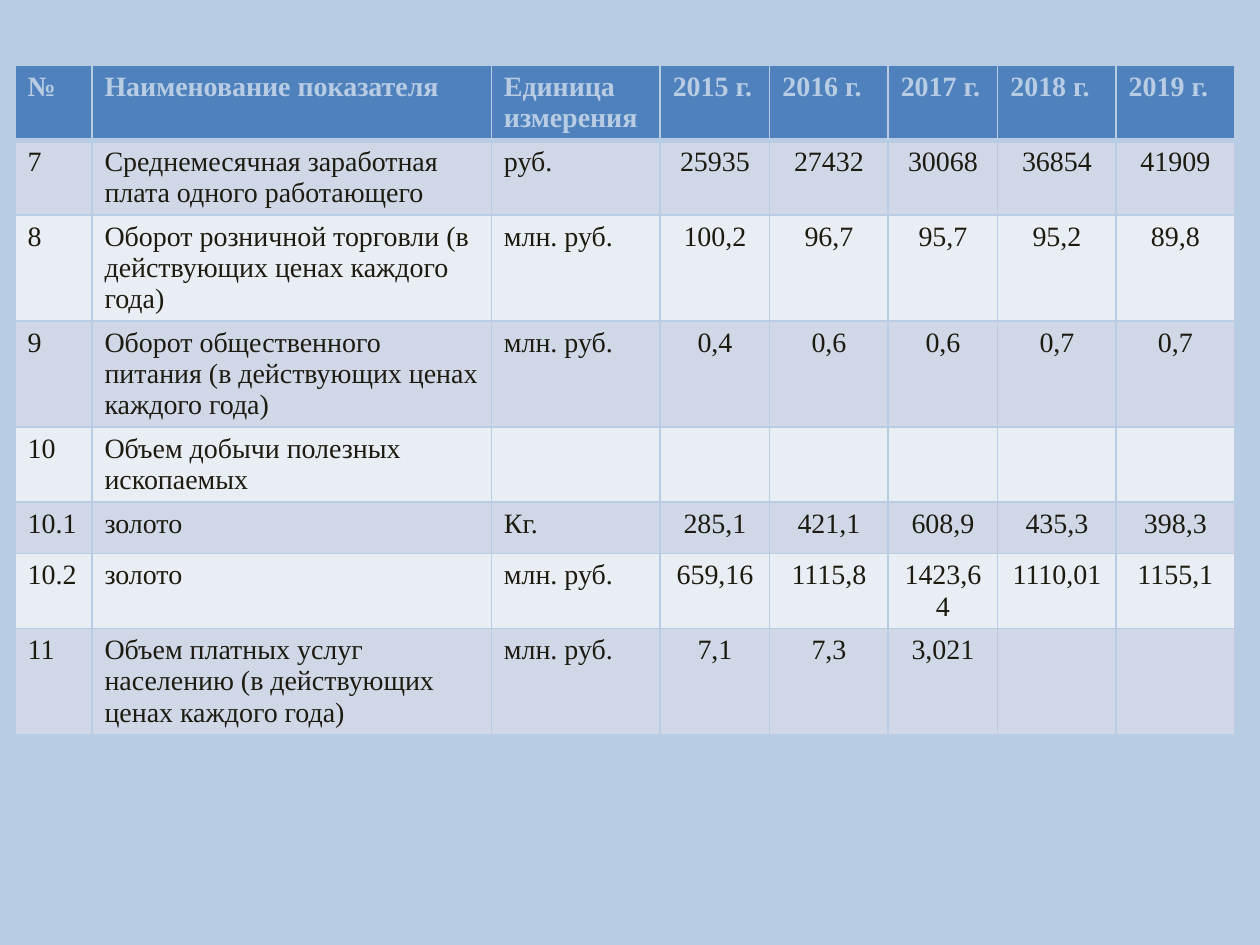
import pptx
import pptx.dml.color
import pptx.enum.text
import pptx.oxml
import pptx.oxml.ns
import pptx.util

Inches = pptx.util.Inches
RGBColor = pptx.dml.color.RGBColor

PALE_BLUE = RGBColor(0xB8, 0xCC, 0xE4)
HEADER_BLUE = RGBColor(0x4F, 0x81, 0xBD)
BAND_DARK = RGBColor(0xD0, 0xD8, 0xE8)
BAND_LIGHT = RGBColor(0xE9, 0xED, 0xF4)
TEXT_DARK = RGBColor(0x1D, 0x1B, 0x10)

FONT = "Times New Roman"
FONT_SIZE = 16
COLUMN_WIDTHS = [0.61, 3.17, 1.34, 0.87, 0.94, 0.87, 0.94, 0.94]
ROW_HEIGHT = 0.41
FIRST_YEAR_COLUMN = 3

HEADER = ["№", "Наименование показателя", "Единица измерения"] + [
    f"{year} г." for year in range(2015, 2020)
]
INDICATORS = [
    ["7", "Среднемесячная заработная плата одного работающего", "руб.",
     "25935", "27432", "30068", "36854", "41909"],
    ["8", "Оборот розничной торговли (в действующих ценах каждого года)", "млн. руб.",
     "100,2", "96,7", "95,7", "95,2", "89,8"],
    ["9", "Оборот общественного питания (в действующих ценах каждого года)", "млн. руб.",
     "0,4", "0,6", "0,6", "0,7", "0,7"],
    ["10", "Объем добычи полезных ископаемых", "", "", "", "", "", ""],
    ["10.1", "золото", "Кг.", "285,1", "421,1", "608,9", "435,3", "398,3"],
    ["10.2", "золото", "млн. руб.", "659,16", "1115,8", "1423,64", "1110,01", "1155,1"],
    ["11", "Объем платных услуг населению (в действующих ценах каждого года)", "млн. руб.",
     "7,1", "7,3", "3,021", "", ""],
]


def set_borders(cell, top=1, bottom=1):
    """Draw the four cell borders; must run before the cell is filled."""
    properties = cell._tc.get_or_add_tcPr()
    for side, width in (("L", 1), ("R", 1), ("T", top), ("B", bottom)):
        properties.append(pptx.oxml.parse_xml(
            f'<a:ln{side} {pptx.oxml.ns.nsdecls("a")} w="{pptx.util.Pt(width)}">'
            f'<a:solidFill><a:srgbClr val="{PALE_BLUE}"/></a:solidFill>'
            f'</a:ln{side}>'
        ))


def style_cell(cell, text, fill, color, bold=False, centred=False):
    cell.fill.solid()
    cell.fill.fore_color.rgb = fill
    cell.text = text
    para = cell.text_frame.paragraphs[0]
    if centred:
        para.alignment = pptx.enum.text.PP_ALIGN.CENTER
    para.font.name = FONT
    para.font.size = pptx.util.Pt(FONT_SIZE)
    para.font.bold = bold
    para.font.color.rgb = color


def add_indicator_table(page):
    rows = [HEADER] + INDICATORS
    table = page.shapes.add_table(
        len(rows), len(COLUMN_WIDTHS), Inches(0.12), Inches(0.52),
        Inches(sum(COLUMN_WIDTHS)), Inches(ROW_HEIGHT * len(rows)),
    ).table
    for column, width in zip(table.columns, COLUMN_WIDTHS):
        column.width = Inches(width)

    for row_index, row in enumerate(rows):
        table.rows[row_index].height = Inches(ROW_HEIGHT)
        for column_index, text in enumerate(row):
            cell = table.cell(row_index, column_index)
            # Thick rule between the header and the first indicator
            set_borders(cell, top=3 if row_index == 1 else 1,
                        bottom=3 if row_index == 0 else 1)
            if row_index == 0:
                style_cell(cell, text, HEADER_BLUE, PALE_BLUE, bold=True)
            else:
                band = BAND_DARK if row_index % 2 else BAND_LIGHT
                style_cell(cell, text, band, TEXT_DARK,
                           centred=column_index >= FIRST_YEAR_COLUMN)


def main():
    deck = pptx.Presentation()
    deck.slide_width = Inches(10)
    deck.slide_height = Inches(7.5)

    # Blank page with a plain background
    page = deck.slides.add_slide(deck.slide_layouts[6])
    page.background.fill.solid()
    page.background.fill.fore_color.rgb = PALE_BLUE

    add_indicator_table(page)
    deck.save("out.pptx")


if __name__ == "__main__":
    main()
